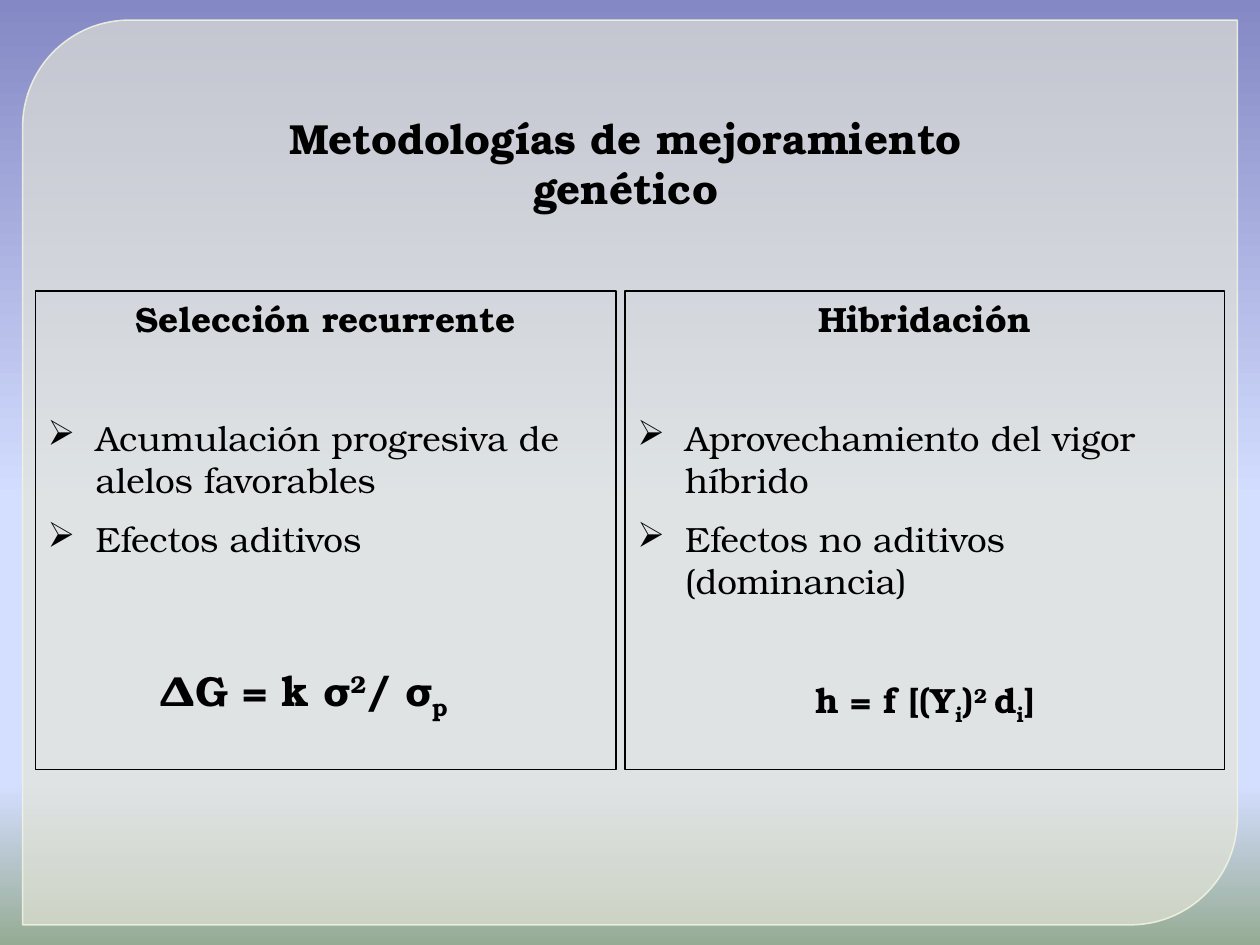
import pptx
import pptx.dml.color
import pptx.enum.shapes
import pptx.enum.text
import pptx.oxml
import pptx.oxml.ns
import pptx.util

FONT = "TeX Gyre Bonum"
WIDTH, HEIGHT = 10, 7.5
BLACK = "000000"
SKY = [(0, "8488C4"), (53, "D4DEFF"), (83, "D4DEFF"), (100, "96AB94")]
CENTER = pptx.enum.text.PP_ALIGN.CENTER
LEFT = pptx.enum.text.PP_ALIGN.LEFT
TOP = pptx.enum.text.MSO_ANCHOR.TOP
MIDDLE = pptx.enum.text.MSO_ANCHOR.MIDDLE
SHAPES = pptx.enum.shapes.MSO_SHAPE
SUB, SUPER = -25, 30
BULLET_INDENT = pptx.util.Inches(0.38)

PANELS = [
    ((0.28, 2.31, 4.61, 3.8), "Selección recurrente",
     ["Acumulación progresiva de alelos favorables", "Efectos aditivos"], []),
    ((4.96, 2.31, 4.76, 3.8), "Hibridación",
     ["Aprovechamiento del vigor híbrido", "Efectos no aditivos (dominancia)"],
     [("h = f [(Y", 0), ("i", SUB), (")", 0), ("2 ", SUPER),
      ("d", 0), ("i", SUB), ("]", 0)]),
]
GAIN = [("ΔG = k σ", 0), ("2", SUPER), ("/ σ", 0), ("p", SUB)]


def color(hex_string):
    """Turn a hex string into an RGB colour."""
    return pptx.dml.color.RGBColor.from_string(hex_string)


def inches(box):
    """Convert a box in inches to lengths."""
    return [pptx.util.Inches(side) for side in box]


def element(xml):
    """Parse a DrawingML fragment whose root lacks its namespace."""
    tag, rest = xml.split(" ", 1)
    return pptx.oxml.parse_xml(f"{tag} {pptx.oxml.ns.nsdecls('a')} {rest}")


def set_alpha(fill, percent):
    """Make a solid fill partly transparent."""
    tint = fill._xPr.find(".//" + pptx.oxml.ns.qn("a:srgbClr"))
    tint.append(element(f'<a:alpha val="{percent * 1000}"/>'))


def write(paragraph, runs, size, bold=True, align=CENTER, before=0):
    """Fill a paragraph with runs of text and baseline shift."""
    paragraph.alignment = align
    paragraph.space_before = pptx.util.Pt(before)
    for text, shift in runs:
        run = paragraph.add_run()
        run.text = text
        run.font.name, run.font.size, run.font.bold = FONT, pptx.util.Pt(size), bold
        run.font.color.rgb = color(BLACK)
        if shift:
            run.font._element.set("baseline", str(shift * 1000))


def add_bullet(paragraph):
    """Give a paragraph an arrow bullet with a hanging indent."""
    properties = paragraph._p.get_or_add_pPr()
    properties.set("marL", str(BULLET_INDENT))
    properties.set("indent", str(-BULLET_INDENT))
    properties.append(element('<a:buChar char="➢"/>'))


def prepare_frame(shape, anchor):
    """Wrap and anchor the text of a shape and return its frame."""
    frame = shape.text_frame
    frame.word_wrap = True
    frame.auto_size = pptx.enum.text.MSO_AUTO_SIZE.NONE
    frame.vertical_anchor = anchor
    return frame


def paint_background(slide):
    """Fill the slide with the vertical sky gradient."""
    fill = slide.background.fill
    fill.gradient()
    gradient = slide.background._cSld.find(".//" + pptx.oxml.ns.qn("a:gradFill"))
    stops = "".join(f'<a:gs pos="{place * 1000}"><a:srgbClr val="{tint}"/></a:gs>'
                    for place, tint in SKY)
    gradient.getparent().replace(gradient, element(
        f'<a:gradFill rotWithShape="1"><a:gsLst>{stops}</a:gsLst>'
        '<a:lin ang="5400000" scaled="0"/></a:gradFill>'))


def add_sheet(slide, box):
    """Add the translucent sheet with two rounded corners."""
    sheet = slide.shapes.add_shape(SHAPES.ROUND_2_DIAG_RECTANGLE, *inches(box))
    sheet.shadow.inherit = False
    sheet.adjustments[0], sheet.adjustments[1] = 0.118, 0
    sheet.fill.solid()
    sheet.fill.fore_color.rgb = color("E5E6D7")
    set_alpha(sheet.fill, 65)
    sheet.line.color.rgb = color("F2F4E2")
    sheet.line.width = pptx.util.Pt(0.87)
    set_alpha(sheet.line.fill, 88)


def place_title(slide, box, text):
    """Move the title placeholder to its box and write it."""
    title = slide.shapes.title
    title.left, title.top, title.width, title.height = inches(box)
    write(prepare_frame(title, TOP).paragraphs[0], [(text, 0)], 24)
    tree = slide.shapes._spTree
    tree.remove(title._element)
    tree.append(title._element)


def add_panel(slide, box, heading, points, formula):
    """Add a framed panel with heading, bullets and optional formula."""
    panel = slide.shapes.add_shape(SHAPES.RECTANGLE, *inches(box))
    panel.shadow.inherit = False
    panel.fill.background()
    panel.line.color.rgb = color(BLACK)
    panel.line.width = pptx.util.Pt(0.75)
    frame = prepare_frame(panel, TOP)
    write(frame.paragraphs[0], [(heading, 0)], 20)
    for index, point in enumerate(points):
        paragraph = frame.add_paragraph()
        write(paragraph, [(point, 0)], 20, False, LEFT, 10 if index else 44)
        add_bullet(paragraph)
    if formula:
        write(frame.add_paragraph(), formula, 20, before=44)


def add_formula(slide, box, runs):
    """Add a centred formula in a text box."""
    formula = slide.shapes.add_textbox(*inches(box))
    write(prepare_frame(formula, MIDDLE).paragraphs[0], runs, 24)


def main():
    """Build and save the slide."""
    deck = pptx.Presentation()
    deck.slide_width, deck.slide_height = inches((WIDTH, HEIGHT))
    slide = deck.slides.add_slide(deck.slide_layouts[5])
    paint_background(slide)
    add_sheet(slide, (0.18, 0.16, 9.64, 7.18))
    place_title(slide, (1.46, 0.84, 7.01, 0.5), "Metodologías de mejoramiento genético")
    for panel in PANELS:
        add_panel(slide, *panel)
    add_formula(slide, (0.85, 5.25, 3.12, 0.5), GAIN)
    deck.save("out.pptx")


if __name__ == "__main__":
    main()
